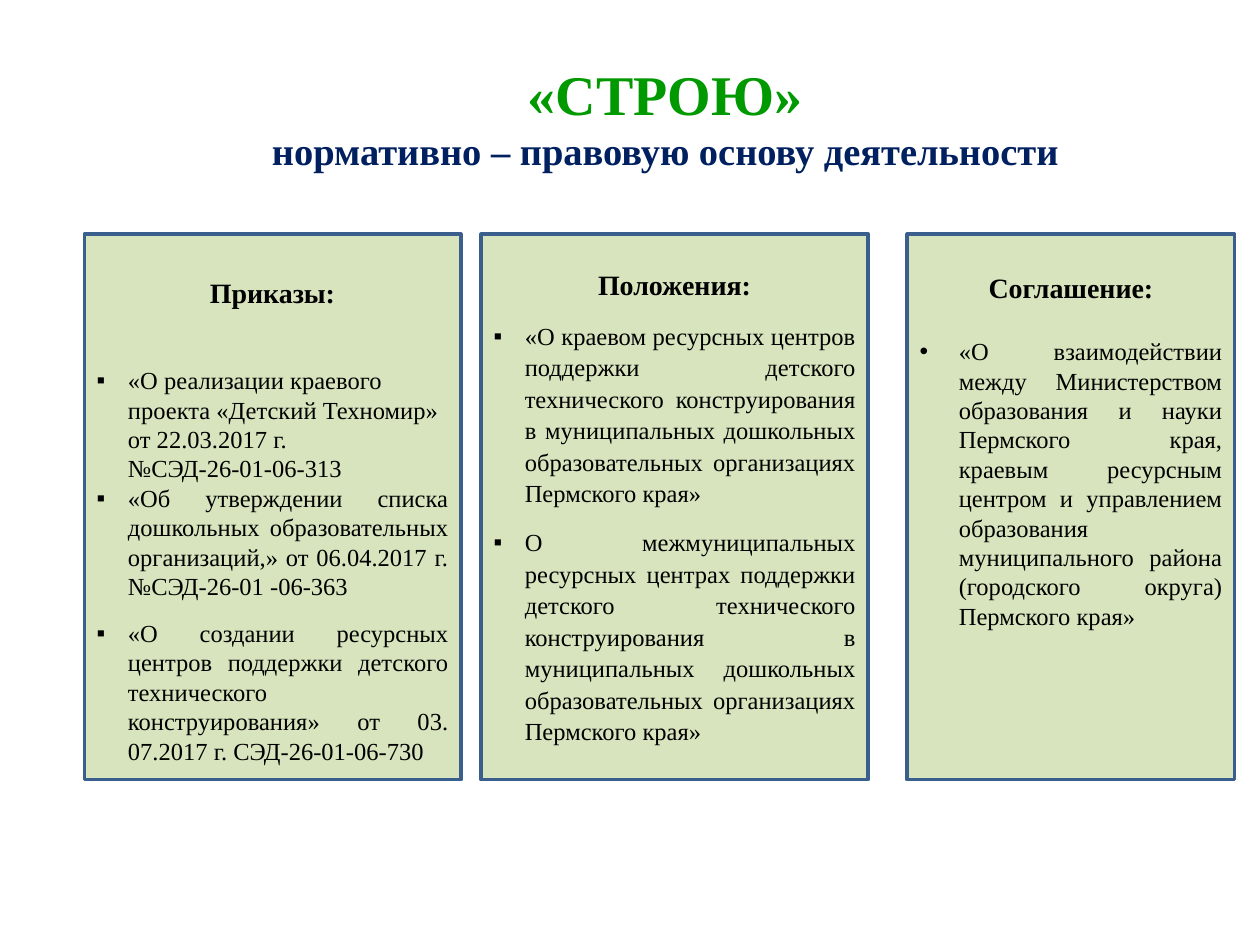
from lxml.etree import SubElement
from pptx import Presentation
from pptx.dml.color import RGBColor
from pptx.enum.shapes import MSO_SHAPE as Shape
from pptx.enum.text import MSO_ANCHOR as Anchor, PP_ALIGN as Align
from pptx.oxml.ns import qn
from pptx.util import Cm, Pt

FONT = "Times New Roman"
JUSTIFIED, LEFT = Align.JUSTIFY, Align.LEFT
PANEL_TOP, PANEL_HEIGHT = 4.72, 11

PANELS = [
    dict(left=1.7, width=7.59, inset=0.83, heading="Приказы:", heading_gap=32.2,
         indent=0.63, spacing=None, items=[
             ("▪", LEFT, 0, "«О реализации краевого проекта «Детский Техномир» от 22.03.2017 г."),
             (None, LEFT, 0, "№СЭД-26-01-06-313"),
             ("▪", JUSTIFIED, 10, "«Об утверждении списка дошкольных образовательных организаций,» "
              "от 06.04.2017 г. №СЭД-26-01 -06-363"),
             ("▪", JUSTIFIED, 0, "«О создании ресурсных центров поддержки детского технического "
              "конструирования» от 03. 07.2017 г. СЭД-26-01-06-730"),
         ]),
    dict(left=9.7, width=7.8, inset=0.72, heading="Положения:", heading_gap=10,
         indent=0.63, spacing=18, items=[
             ("▪", JUSTIFIED, 10, "«О краевом ресурсных центров поддержки детского технического "
              "конструирования в муниципальных дошкольных образовательных организациях "
              "Пермского края»"),
             ("▪", JUSTIFIED, 0, "О межмуниципальных ресурсных центрах поддержки детского "
              "технического конструирования в муниципальных дошкольных образовательных "
              "организациях Пермского края»"),
         ]),
    dict(left=18.29, width=6.6, inset=0.73, heading="Соглашение:", heading_gap=18.4,
         indent=0.79, spacing=None, items=[
             ("•", JUSTIFIED, 0, "«О взаимодействии между Министерством образования и науки "
              "Пермского края, краевым ресурсным центром и управлением образования "
              "муниципального района (городского округа) Пермского края»"),
         ]),
]


def color(hex_string):
    """Return the colour for a hex string."""
    return RGBColor.from_string(hex_string)


def format_run(run, size, hex_string, bold):
    """Set the font of a run."""
    run.font.name = FONT
    run.font.size = Pt(size)
    run.font.bold = bold
    run.font.color.rgb = color(hex_string)


def indent_item(paragraph, indent, bullet):
    """Indent a paragraph and hang its bullet, if it has one."""
    properties = paragraph._p.get_or_add_pPr()
    properties.set("marL", str(Cm(indent)))
    if bullet:
        properties.set("indent", str(-Cm(indent)))
        SubElement(properties, qn("a:buFont")).set("typeface", "Arial")
        SubElement(properties, qn("a:buChar")).set("char", bullet)


def add_title(slide, left, top, width, height):
    """Place the two-line title."""
    title = slide.shapes.title
    title.left, title.top, title.width, title.height = map(Cm, (left, top, width, height))
    title.text_frame.text = "«СТРОЮ»\vнормативно – правовую основу деятельности"
    title.text_frame.vertical_anchor = Anchor.MIDDLE
    heading = title.text_frame.paragraphs[0]
    heading.alignment = Align.CENTER
    for run, size, hex_string in zip(heading.runs, (32, 22), ("009900", "002060")):
        format_run(run, size, hex_string, True)


def add_panel(slide, left, top, width, height, inset, heading, heading_gap, indent, spacing, items):
    """Draw one panel with a heading and its list of documents."""
    panel = slide.shapes.add_shape(Shape.RECTANGLE, *map(Cm, (left, top, width, height)))
    panel.shadow.inherit = False
    panel.fill.solid()
    panel.fill.fore_color.rgb = color("D7E4BD")
    panel.line.color.rgb = color("3A5F8C")
    panel.line.width = Pt(2)

    frame = panel.text_frame
    frame.word_wrap = True
    frame.vertical_anchor = Anchor.TOP
    frame.margin_top = Cm(inset)
    frame.text = "\n".join([heading] + [wording for *_, wording in items])

    heading_line, *documents = frame.paragraphs
    heading_line.alignment = Align.CENTER
    heading_line.space_after = Pt(heading_gap)
    format_run(heading_line.runs[0], 16, "000000", True)
    for document, (bullet, alignment, gap, _) in zip(documents, items):
        indent_item(document, indent, bullet)
        document.alignment = alignment
        document.space_after = Pt(gap)
        format_run(document.runs[0], 14, "000000", False)
    if spacing:
        for paragraph in frame.paragraphs:
            paragraph.line_spacing = Pt(spacing)


def main():
    """Build the slide and save it."""
    presentation = Presentation()
    presentation.slide_width, presentation.slide_height = Cm(25.4), Cm(19.05)
    slide = presentation.slides.add_slide(presentation.slide_layouts[5])
    add_title(slide, 2.69, 0.76, 21.44, 3.18)
    for panel in PANELS:
        add_panel(slide, top=PANEL_TOP, height=PANEL_HEIGHT, **panel)
    presentation.save("out.pptx")


if __name__ == "__main__":
    main()
